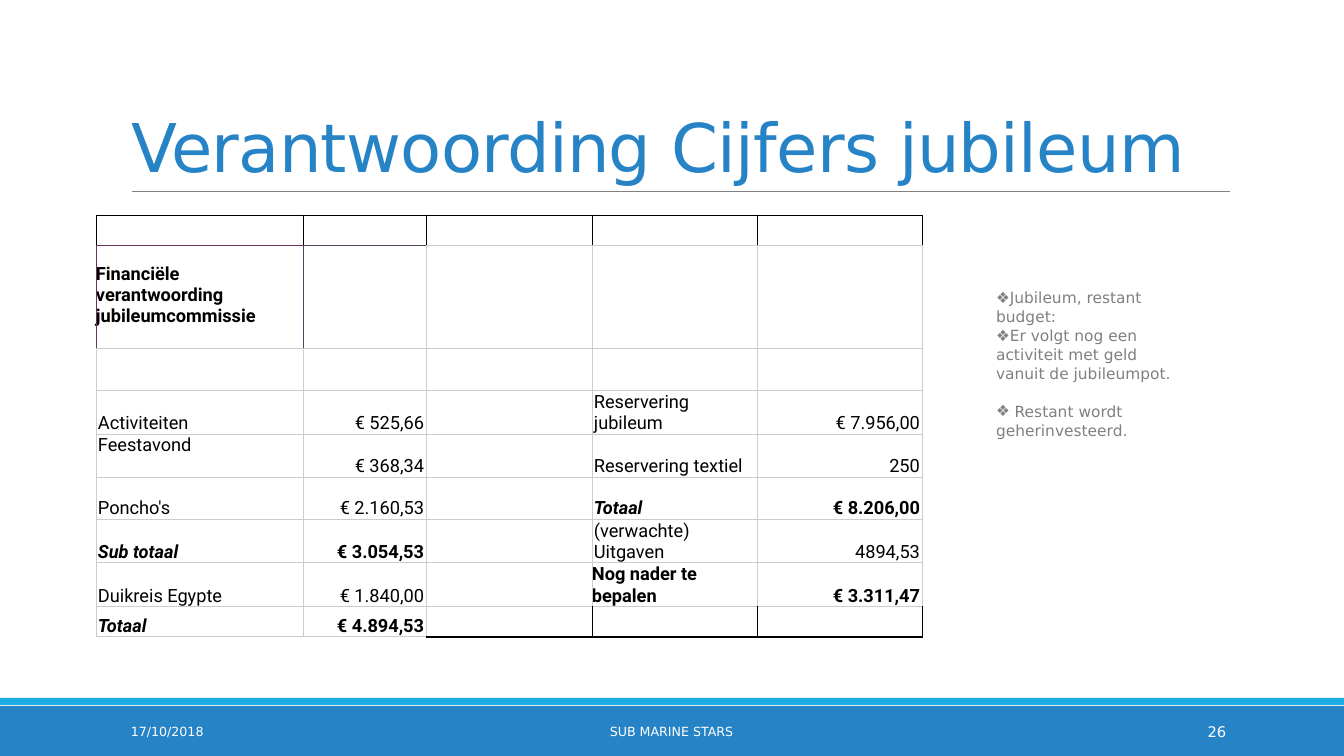
from lxml import etree
from pptx import Presentation, util as u
from pptx.dml.color import RGBColor
from pptx.enum import shapes, text
from pptx.oxml import ns

COLORS = {"blue": "2683C6", "cyan": "1CADE4", "gray": "808080", "grid": "CCCCCC",
          "black": "000000", "white": "FFFFFF", "plum": "68335D", "violet": "583E5D"}
RGB = {name: RGBColor.from_string(value) for name, value in COLORS.items()}
LEFT, CENTER, RIGHT = text.PP_ALIGN.LEFT, text.PP_ALIGN.CENTER, text.PP_ALIGN.RIGHT


def px(count):
    return u.Emu(round(count * 914400 / 100.8))


def style(para, size, color, align=LEFT, name="DejaVu Sans"):
    para.alignment = align
    for span in para.runs:
        span.font.name = name
        span.font.size = u.Pt(size)
        span.font.color.rgb = RGB[color]


deck = Presentation()
deck.slide_width, deck.slide_height = px(1344), px(756)
page = deck.slides.add_slide(deck.slide_layouts[1])

# Footer bands
for top, height, color in [(706, 50, "blue"), (698, 7, "cyan")]:
    band = page.shapes.add_shape(shapes.MSO_SHAPE.RECTANGLE, 0, px(top), px(1344), px(height))
    band.shadow.inherit = False
    band.fill.solid()
    band.fill.fore_color.rgb = RGB[color]
    band.line.fill.background()

# Footer texts
for left, width, words, size, align in [(121, 272, "17/10/2018", 9, LEFT),
                                        (406, 531, "SUB MARINE STARS", 9, CENTER),
                                        (1092, 144, "26", 10.5, RIGHT)]:
    box = page.shapes.add_textbox(px(left), px(712), px(width), px(40))
    frame = box.text_frame
    frame.word_wrap = True
    frame.vertical_anchor = text.MSO_ANCHOR.MIDDLE
    frame.text = words
    style(frame.paragraphs[0], size, "white", align)

# Title and the rule below it
title = page.shapes.title
title.left, title.top, title.width, title.height = px(121), px(31), px(1109), px(160)
frame = title.text_frame
frame.text = "Verantwoording Cijfers jubileum"
frame.auto_size = text.MSO_AUTO_SIZE.NONE
frame.vertical_anchor = text.MSO_ANCHOR.BOTTOM
para = frame.paragraphs[0]
para.line_spacing = 0.85
style(para, 48, "blue")
para.runs[0].font._element.set("spc", "-50")

rule = page.shapes.add_connector(shapes.MSO_CONNECTOR.STRAIGHT, px(132), px(191), px(1230), px(191))
rule.line.color.rgb = RGB["gray"]
rule.line.width = u.Pt(0.5)
etree.SubElement(rule._element.spPr, ns.qn("a:effectLst"))

# Remarks
remarks = page.placeholders[1]
remarks.left, remarks.top, remarks.width, remarks.height = px(986), px(283), px(211), px(190)
frame = remarks.text_frame
frame.text = "\n".join(["Jubileum, restant budget:",
                        "Er volgt nog een activiteit met geld vanuit de jubileumpot.",
                        " Restant wordt geherinvesteerd."])
frame.auto_size = text.MSO_AUTO_SIZE.NONE
for para, gap in zip(frame.paragraphs, [0, 0, 13]):
    props = para._p.get_or_add_pPr()
    props.set("marL", "0")
    props.set("indent", "0")
    etree.SubElement(props, ns.qn("a:buChar")).set("char", "❖")
    para.space_before = u.Pt(gap)
    para.line_spacing = 1.03
    style(para, 11, "gray")

# Financial table: cell texts
COLUMNS = [207, 123, 166, 165, 165]
ROWS = [30, 103] + [42] * 6 + [30]
CELLS = [
    ["", "", "", "", ""],
    ["Financiële verantwoording jubileumcommissie", "", "", "", ""],
    ["", "", "", "", ""],
    ["Activiteiten", "€ 525,66", "", "Reservering jubileum", "€ 7.956,00"],
    ["Feestavond", "€ 368,34", "", "Reservering textiel", "250"],
    ["Poncho's", "€ 2.160,53", "", "Totaal", "€ 8.206,00"],
    ["Sub totaal", "€ 3.054,53", "", "(verwachte) Uitgaven", "4894,53"],
    ["Duikreis Egypte", "€ 1.840,00", "", "Nog nader te bepalen", "€ 3.311,47"],
    ["Totaal", "€ 4.894,53", "", "", ""],
]
BOLD = {(1, 0), (5, 3), (5, 4), (6, 0), (6, 1), (7, 3), (7, 4), (8, 0), (8, 1)}
ITALIC = {(5, 3), (6, 0), (8, 0)}
FLUSH = {(1, 0), (7, 3)}
RAISED = {(1, 0), (4, 0)}

# Grid lines that differ from the light gray, by row and column
UPRIGHTS = {(0, line): "black" for line in range(6)}
UPRIGHTS.update({(8, line): "black" for line in range(3, 6)})
UPRIGHTS.update({(1, 0): "plum", (1, 1): "violet"})
LEVELS = {(0, col): "black" for col in range(5)}
LEVELS.update({(9, col): "black" for col in range(2, 5)})
LEVELS.update({(1, 0): "plum", (1, 1): "violet"})

table = page.shapes.add_table(len(ROWS), len(COLUMNS), px(96), px(215),
                              px(sum(COLUMNS)), px(sum(ROWS))).table
table.first_row = table.horz_banding = False
for column, width in zip(table.columns, COLUMNS):
    column.width = px(width)
for line, height in zip(table.rows, ROWS):
    line.height = px(height)

for row, words in enumerate(CELLS):
    for col, word in enumerate(words):
        cell = table.cell(row, col)
        spot = (row, col)
        cell.margin_left = cell.margin_right = px(0 if spot in FLUSH else 2)
        cell.margin_top = 0
        cell.margin_bottom = px(21 if spot in RAISED else 0)
        cell.vertical_anchor = text.MSO_ANCHOR.BOTTOM
        cell.fill.solid()
        cell.fill.fore_color.rgb = RGB["white"]
        if word:
            cell.text = word
            para = cell.text_frame.paragraphs[0]
            style(para, 13, "black", RIGHT if col in (1, 4) else LEFT, "Roboto")
            para.runs[0].font.bold = spot in BOLD
            para.runs[0].font.italic = spot in ITALIC

        # Cell borders
        sides = [("a:lnL", UPRIGHTS.get(spot)), ("a:lnR", UPRIGHTS.get((row, col + 1))),
                 ("a:lnT", LEVELS.get(spot)), ("a:lnB", LEVELS.get((row + 1, col)))]
        for order, (side, color) in enumerate(sides):
            thick = side == "a:lnB" and row == 8 and color
            border = etree.Element(ns.qn(side), w=str(u.Pt(1.5 if thick else 0.6)))
            fill = etree.SubElement(border, ns.qn("a:solidFill"))
            etree.SubElement(fill, ns.qn("a:srgbClr"), val=COLORS[color or "grid"])
            cell._tc.get_or_add_tcPr().insert(order, border)

deck.save("out.pptx")
